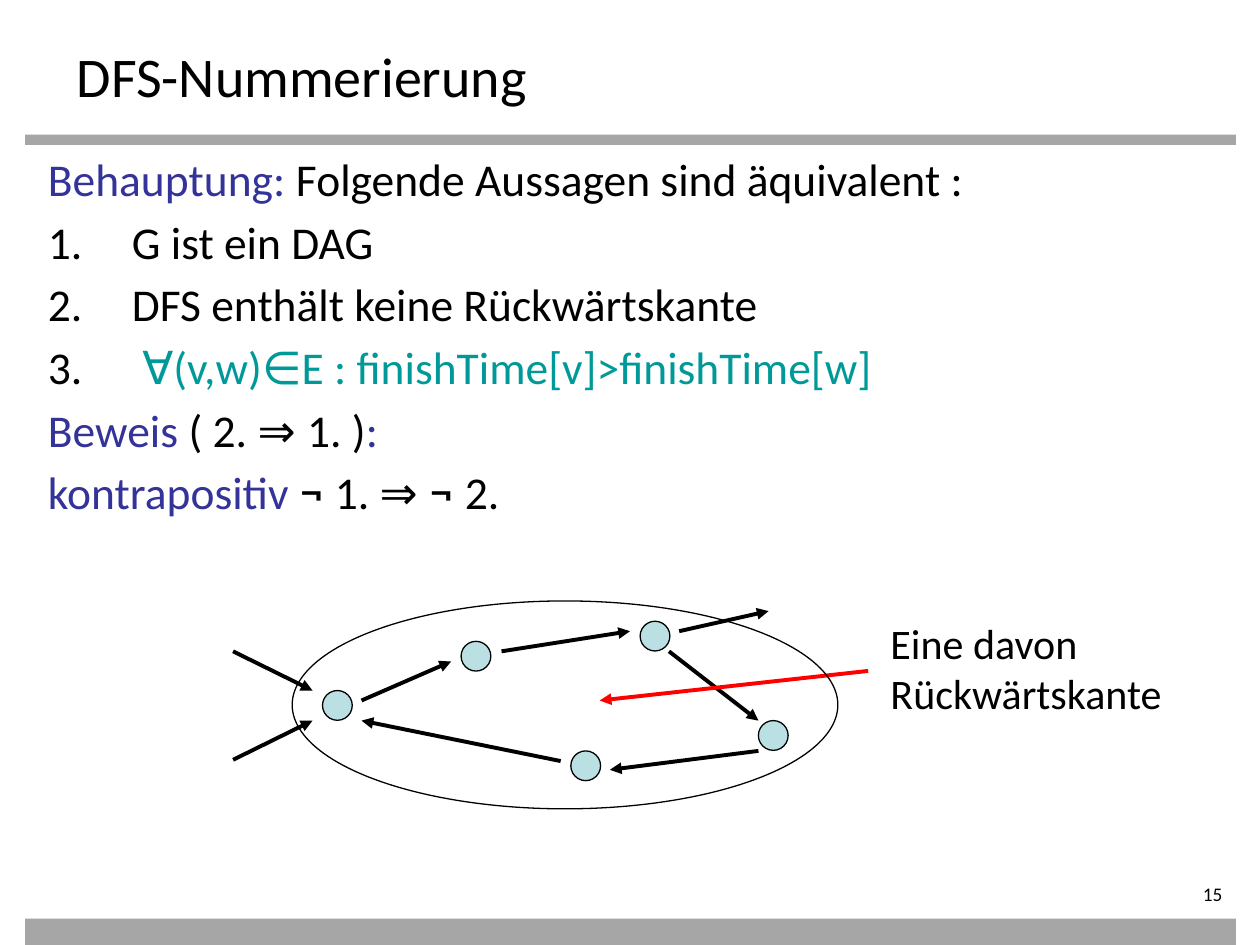
"""Builds the DFS numbering slide with its cycle diagram."""
from lxml import etree
from pptx import Presentation
from pptx.dml.color import RGBColor
from pptx.enum.shapes import MSO_CONNECTOR as Link, MSO_SHAPE as Shape
from pptx.enum.text import MSO_ANCHOR as Anchor, MSO_AUTO_SIZE as Fit, PP_ALIGN as Align
from pptx.oxml.ns import qn
from pptx.util import Pt

BLACK = RGBColor(0x00, 0x00, 0x00)
GRAY = RGBColor(0xA6, 0xA6, 0xA6)
BLUE = RGBColor(0x33, 0x33, 0x99)
TEAL = RGBColor(0x00, 0x99, 0x99)
RED = RGBColor(0xFF, 0x00, 0x00)
NODE_FILL = RGBColor(0xBB, 0xE0, 0xE3)
TEXT_FONT, SYMBOL_FONT = "Calibri", "Roboto"
SYMBOLS = "∀∈⇒¬"

deck = Presentation()
deck.slide_width, deck.slide_height = Pt(720), Pt(540)
page = deck.slides.add_slide(deck.slide_layouts[1])


def add_filled(kind, left, top, width, height, fill=None, line=None):
    shape = page.shapes.add_shape(kind, Pt(left), Pt(top), Pt(width), Pt(height))
    shape.shadow.inherit = False
    if fill is None:
        shape.fill.background()
    else:
        shape.fill.solid()
        shape.fill.fore_color.rgb = fill
    if line is None:
        shape.line.fill.background()
    else:
        shape.line.color.rgb = line
        shape.line.width = Pt(0.75)


def style(font, size, color=BLACK):
    font.name = TEXT_FONT
    font.size = Pt(size)
    font.color.rgb = color


for top, height in ((77, 5.8), (524.9, 15.1)):
    add_filled(Shape.RECTANGLE, 14.4, top, 691.9, height, GRAY)

title = page.shapes.title
title.left, title.top, title.width, title.height = Pt(36.7), Pt(20.2), Pt(648), Pt(39.6)
title.text_frame.text = "DFS-Nummerierung"
title.text_frame.vertical_anchor = Anchor.TOP
title.text_frame.auto_size = Fit.NONE
title.text_frame.paragraphs[0].alignment = Align.LEFT
style(title.text_frame.paragraphs[0].font, 32)

statements = [
    (False, [("Behauptung:", BLUE), (" Folgende Aussagen sind äquivalent :", BLACK)]),
    (True, [("G ist ein DAG", BLACK)]),
    (True, [("DFS enthält keine Rückwärtskante", BLACK)]),
    (True, [(" ", BLACK), ("∀", TEAL), ("(v,w)", TEAL), ("∈", TEAL),
            ("E : finishTime[v]>finishTime[w]", TEAL)]),
    (False, [("Beweis ", BLUE), ("( 2. ", BLACK), ("⇒ ", BLACK), ("1. )", BLACK), (":", BLUE)]),
    (False, [("kontrapositiv ", BLUE), ("¬", BLACK), (" 1. ", BLACK), ("⇒ ¬", BLACK),
             (" 2.", BLACK)]),
]
body = page.placeholders[1]
body.left, body.top, body.width, body.height = Pt(20.2), Pt(82.8), Pt(648), Pt(391)
frame = body.text_frame
frame.auto_size = Fit.NONE
for index, (numbered, parts) in enumerate(statements):
    para = frame.add_paragraph() if index else frame.paragraphs[0]
    props = para._p.get_or_add_pPr()
    props.set("marL", str(Pt(48)))
    props.set("indent", str(Pt(-48)))
    if numbered:
        etree.SubElement(props, qn("a:buFont"), typeface="+mj-lt")
        etree.SubElement(props, qn("a:buAutoNum"), type="arabicPeriod")
    else:
        etree.SubElement(props, qn("a:buNone"))
    para.space_before = Pt(4.6 if index else 0)
    para.font.size = Pt(26)
    for text, color in parts:
        span = para.add_run()
        span.text = text
        span.font.name = SYMBOL_FONT if text[0] in SYMBOLS else TEXT_FONT
        span.font.color.rgb = color

for left, top in ((326.2, 429.1), (184.3, 394.6), (263.5, 366.5), (365.8, 355), (433.4, 411.8)):
    add_filled(Shape.OVAL, left, top, 17, 17, NODE_FILL, BLACK)

arrows = [
    (320.4, 434.9, 206.6, 411.8, BLACK),
    (433.4, 429.1, 348.5, 439.9, BLACK),
    (206.6, 400.3, 257.8, 378, BLACK),
    (286.6, 372.2, 360, 360.7, BLACK),
    (382.3, 372.2, 433.4, 411.8, BLACK),
    (133.2, 372.2, 178.6, 394.6, BLACK),
    (388.1, 360.7, 439.2, 349.2, BLACK),
    (133.2, 434.2, 178.6, 411.8, BLACK),
    (496.1, 383.4, 342.7, 400.3, RED),
]
for *ends, color in arrows:
    arrow = page.shapes.add_connector(Link.STRAIGHT, *map(Pt, ends))
    arrow.line.color.rgb = color
    arrow.line.width = Pt(2.25)
    etree.SubElement(arrow.line._get_or_add_ln(), qn("a:tailEnd"), type="triangle")
    etree.SubElement(arrow._element.spPr, qn("a:effectLst"))

add_filled(Shape.OVAL, 167, 343.4, 311.8, 118.8, line=BLACK)

label = page.shapes.add_textbox(Pt(501.8), Pt(349.2), Pt(185), Pt(64.8))
label.text_frame.word_wrap = False
label.text_frame.auto_size = Fit.SHAPE_TO_FIT_TEXT
label.text_frame.paragraphs[0].text = "Eine davon \vRückwärtskante"
style(label.text_frame.paragraphs[0].font, 24)

number = page.shapes.add_textbox(Pt(626.4), Pt(504), Pt(79.2), Pt(15.8))
frame = number.text_frame
frame.word_wrap = True
frame.margin_left = frame.margin_top = frame.margin_bottom = 0
frame.text = "15"
frame.paragraphs[0].alignment = Align.RIGHT
style(frame.paragraphs[0].font, 11)

deck.save("out.pptx")
